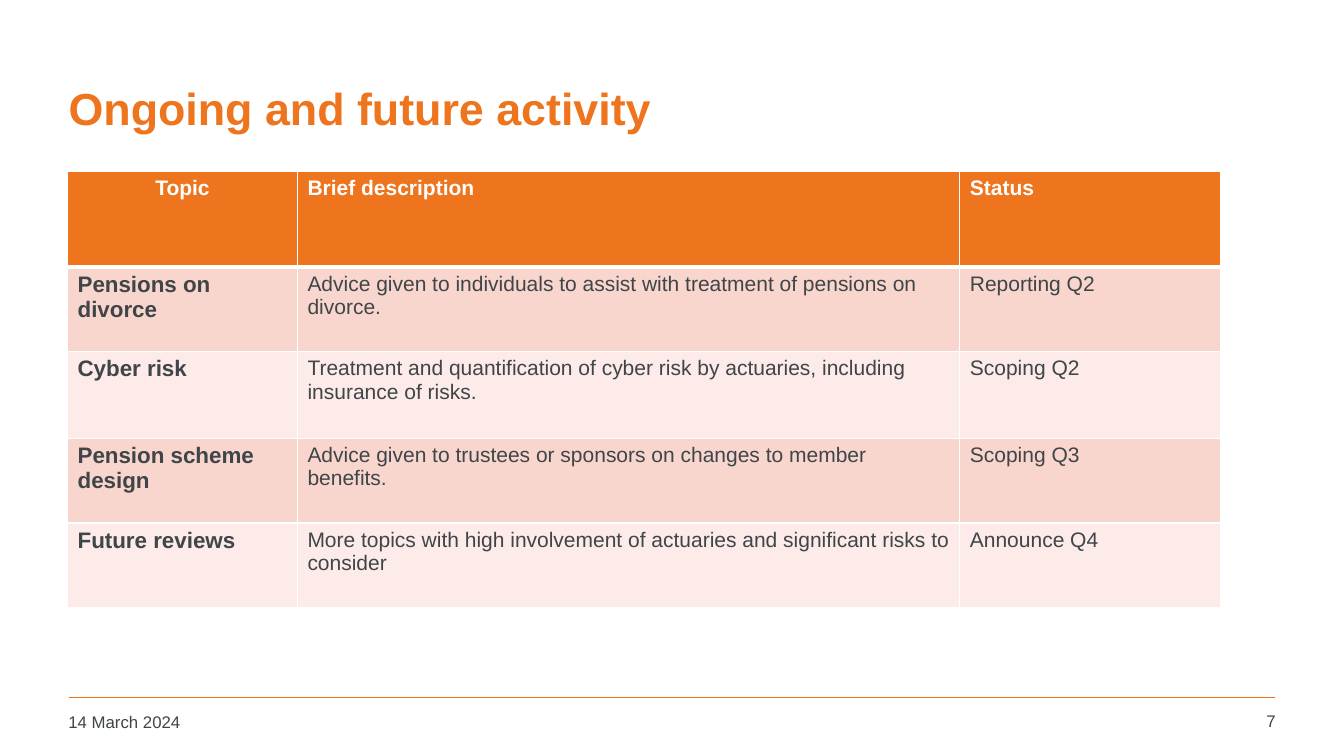
import pptx
import pptx.util
import pptx.dml.color
import pptx.enum.shapes
import pptx.enum.text
import pptx.oxml.ns
import lxml.etree

RGB = pptx.dml.color.RGBColor
ALIGN = pptx.enum.text.PP_ALIGN
ANCHOR = pptx.enum.text.MSO_ANCHOR
ORANGE = RGB(0xEE, 0x74, 0x1D)
SLATE = RGB(0x3F, 0x45, 0x48)
WHITE = RGB(0xFF, 0xFF, 0xFF)
ROSE = RGB(0xF8, 0xD6, 0xCD)
BLUSH = RGB(0xFC, 0xEB, 0xE8)
FONT = "Arial"

COLS = [228, 657, 259]
ROWS = [95, 84, 86, 84, 84]
DATA = [
    ("Topic", "Brief description", "Status"),
    ("Pensions on divorce",
     "Advice given to individuals to assist with treatment of pensions on divorce.",
     "Reporting Q2"),
    ("Cyber risk",
     "Treatment and quantification of cyber risk by actuaries, including insurance of risks.",
     "Scoping Q2"),
    ("Pension scheme design",
     "Advice given to trustees or sponsors on changes to member benefits.",
     "Scoping Q3"),
    ("Future reviews",
     "More topics with high involvement of actuaries and significant risks to consider",
     "Announce Q4"),
]


def px(n):
    return pptx.util.Emu(n * 9144)


def write(frame, text, size, color, bold=False, align=ALIGN.LEFT):
    frame.text = text
    para = frame.paragraphs[0]
    para.alignment = align
    font = para.runs[0].font
    font.name = FONT
    font.size = pptx.util.Pt(size)
    font.bold = bold
    font.color.rgb = color


def add_title(slide, left, top, width, height):
    title = slide.shapes.title
    title.left, title.top = px(left), px(top)
    title.width, title.height = px(width), px(height)
    frame = title.text_frame
    write(frame, "Ongoing and future activity", 32, ORANGE, True)
    frame.word_wrap = True
    frame.auto_size = pptx.enum.text.MSO_AUTO_SIZE.NONE
    frame.vertical_anchor = ANCHOR.MIDDLE


def add_edge(cell, side, points):
    qn = pptx.oxml.ns.qn
    props = cell._tc.get_or_add_tcPr()
    line = lxml.etree.SubElement(props, qn("a:" + side), w=str(pptx.util.Pt(points)))
    fill = lxml.etree.SubElement(line, qn("a:solidFill"))
    lxml.etree.SubElement(fill, qn("a:srgbClr"), val=str(WHITE))


def add_grid(slide, left, top):
    frame = slide.shapes.add_table(
        len(ROWS), len(COLS), px(left), px(top), px(sum(COLS)), px(sum(ROWS)))
    table = frame.table
    for col, width in zip(table.columns, COLS):
        col.width = px(width)
    for r, height in enumerate(ROWS):
        table.rows[r].height = px(height)
        head = r == 0
        shade = ORANGE if head else ROSE if r % 2 else BLUSH
        for c, text in enumerate(DATA[r]):
            cell = table.cell(r, c)
            first = c == 0
            write(cell.text_frame, text, 16 if first and not head else 15,
                  WHITE if head else SLATE, head or first,
                  ALIGN.CENTER if head and first else ALIGN.LEFT)
            add_edge(cell, "lnL", 1)
            add_edge(cell, "lnR", 1)
            add_edge(cell, "lnT", 3 if r == 1 else 1)
            add_edge(cell, "lnB", 3 if head else 1)
            cell.fill.solid()
            cell.fill.fore_color.rgb = shade


def add_note(slide, text, left, top, width, height, align):
    box = slide.shapes.add_textbox(px(left), px(top), px(width), px(height))
    box.text_frame.word_wrap = True
    write(box.text_frame, text, 12, SLATE, align=align)


def add_foot(slide, left, top, width):
    rule = slide.shapes.add_connector(
        pptx.enum.shapes.MSO_CONNECTOR.STRAIGHT,
        px(left + 10), px(top), px(left + width - 10), px(top))
    rule.line.color.rgb = ORANGE
    rule.line.width = pptx.util.Pt(1)
    lxml.etree.SubElement(rule._element.spPr, pptx.oxml.ns.qn("a:effectLst"))
    add_note(slide, "14 March 2024", left, top + 9, 294, 36, ALIGN.LEFT)
    add_note(slide, "7", left + width - 94, top + 8, 94, 37, ALIGN.RIGHT)


def main():
    deck = pptx.Presentation()
    deck.slide_width, deck.slide_height = px(1333), px(750)
    slide = deck.slides.add_slide(deck.slide_layouts[5])
    add_title(slide, 58, 44, 1209, 125)
    add_grid(slide, 67, 170)
    add_foot(slide, 58, 692, 1217)
    deck.save("out.pptx")


if __name__ == "__main__":
    main()
